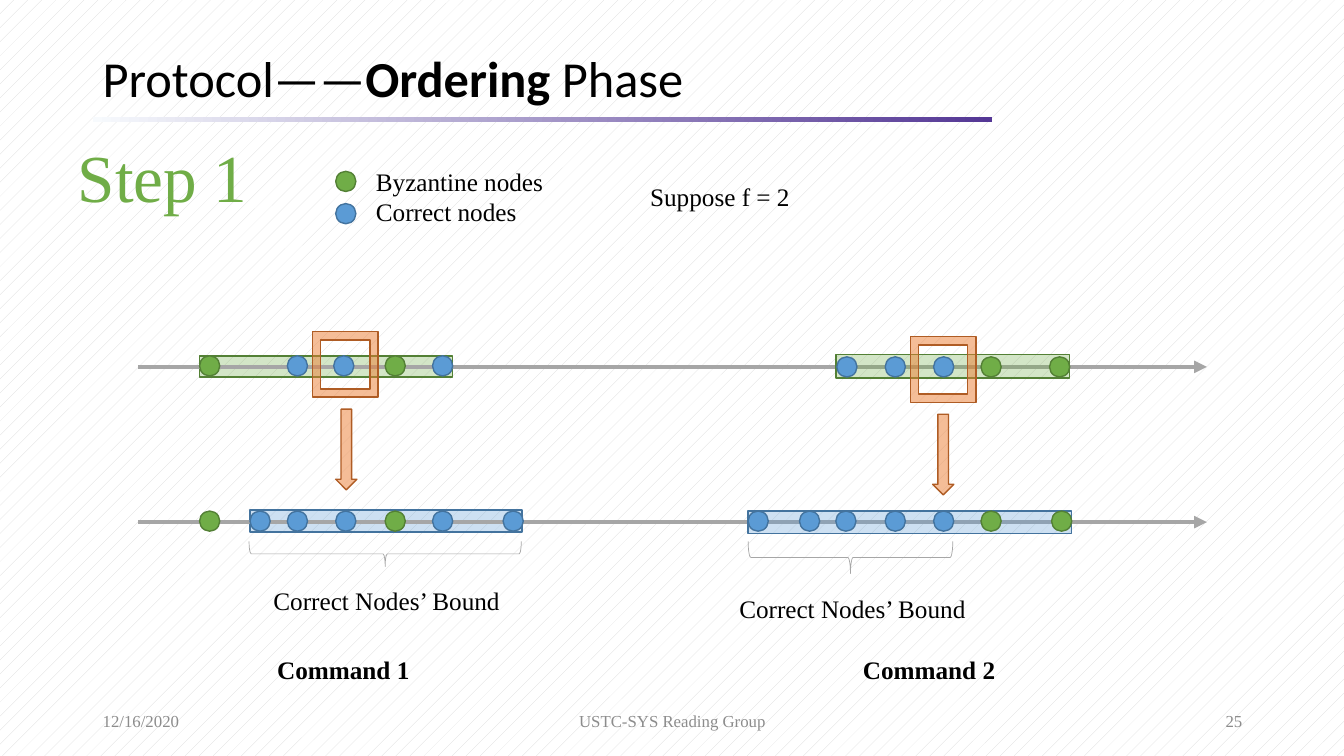
from pptx import Presentation
from pptx.dml.color import RGBColor
from pptx.enum.dml import MSO_PATTERN
from pptx.enum.shapes import MSO_CONNECTOR, MSO_SHAPE as Geo
from pptx.enum.text import MSO_ANCHOR as Anchor, MSO_AUTO_SIZE as AutoSize, PP_ALIGN as Align
from pptx.oxml.ns import qn
from pptx.util import Inches, Pt
from lxml.etree import SubElement

BLACK = RGBColor(0x00, 0x00, 0x00)
WHITE = RGBColor(0xFF, 0xFF, 0xFF)
HATCH = RGBColor(0xD9, 0xD9, 0xD9)
FOOTER_GRAY = RGBColor(0x8C, 0x8C, 0x8C)
AXIS_GRAY = RGBColor(0xA6, 0xA6, 0xA6)
GREEN = RGBColor(0x70, 0xAD, 0x47)
DARK_GREEN = RGBColor(0x53, 0x80, 0x35)
BLUE = RGBColor(0x5B, 0x9B, 0xD5)
DARK_BLUE = RGBColor(0x43, 0x73, 0x9E)
ORANGE = RGBColor(0xED, 0x7D, 0x31)
DARK_ORANGE = RGBColor(0xAF, 0x5C, 0x24)
PALE_BLUE = RGBColor(0xF7, 0xFA, 0xFD)
PURPLE = RGBColor(0x54, 0x37, 0x95)

BYZANTINE = (GREEN, DARK_GREEN)
CORRECT = (BLUE, DARK_BLUE)
MEDIAN = (ORANGE, DARK_ORANGE)
NODE_SIZE = 0.2


class SlideBuilder:
    """Draws on one slide with the shared fonts and colours."""

    font = "Times New Roman"
    title_font = "Calibri"

    def __init__(self, slide):
        self.slide = slide
        self.shapes = slide.shapes

    def background(self):
        fill = self.slide.background.fill
        fill.patterned()
        fill.pattern = MSO_PATTERN.PERCENT_5
        fill.fore_color.rgb = HATCH
        fill.back_color.rgb = WHITE

    def text(self, box, lines, size=18, color=BLACK, align=Align.LEFT, bold=False,
             anchor=Anchor.TOP, wrap=False):
        frame = self.shapes.add_textbox(*map(Inches, box)).text_frame
        frame.word_wrap = wrap
        frame.vertical_anchor = anchor
        frame.auto_size = AutoSize.SHAPE_TO_FIT_TEXT if anchor == Anchor.TOP else AutoSize.NONE
        frame.text = lines
        for paragraph in frame.paragraphs:
            paragraph.alignment = align
            for run in paragraph.runs:
                self.style(run, self.font, size, color, bold)

    def style(self, run, font, size, color, bold):
        run.font.name = font
        run.font.size = Pt(size)
        run.font.color.rgb = color
        run.font.bold = bold

    def title(self, box, parts):
        """Write the title from (text, bold) parts."""
        frame = self.shapes.add_textbox(*map(Inches, box)).text_frame
        frame.word_wrap = True
        frame.vertical_anchor = Anchor.MIDDLE
        paragraph = frame.paragraphs[0]
        paragraph.line_spacing = 0.9
        for words, bold in parts:
            run = paragraph.add_run()
            run.text = words
            self.style(run, self.title_font, 36, BLACK, bold)

    def title_rule(self, box):
        rule = self.shapes.add_shape(Geo.RECTANGLE, *map(Inches, box))
        rule.shadow.inherit = False
        rule.line.fill.background()
        rule.fill.gradient()
        rule.fill.gradient_angle = 0
        for stop, position, color in zip(rule.fill.gradient_stops, (0, 1), (PALE_BLUE, PURPLE)):
            stop.position = position
            stop.color.rgb = color

    def shape(self, geometry, box, colors, opacity=100):
        fill_color, line_color = colors
        shape = self.shapes.add_shape(geometry, *map(Inches, box))
        shape.shadow.inherit = False
        shape.fill.solid()
        shape.fill.fore_color.rgb = fill_color
        shape.line.color.rgb = line_color
        shape.line.width = Pt(1)
        if opacity < 100:
            color = shape.fill._xPr.find(qn("a:solidFill"))[0]
            SubElement(color, qn("a:alpha")).set("val", str(opacity * 1000))

    def node(self, left, top, kind):
        self.shape(Geo.OVAL, (left, top, NODE_SIZE, NODE_SIZE), kind)

    def axis(self, y):
        axis = self.shapes.add_connector(
            MSO_CONNECTOR.STRAIGHT, Inches(1.37), Inches(y), Inches(11.97), Inches(y))
        axis.line.color.rgb = AXIS_GRAY
        axis.line.width = Pt(3)
        SubElement(axis.line._get_or_add_ln(), qn("a:tailEnd")).set("type", "triangle")
        SubElement(axis._element.spPr, qn("a:effectLst"))

    def brace_below(self, left, top, width, depth):
        """Draw a right brace turned to open upwards over the given width."""
        box = (left + (width - depth) / 2, top + (depth - width) / 2, depth, width)
        brace = self.shapes.add_shape(Geo.RIGHT_BRACE, *map(Inches, box))
        brace.rotation = 90
        brace.shadow.inherit = False
        brace.fill.background()
        brace.line.color.rgb = AXIS_GRAY
        brace.line.width = Pt(0.5)

    def median_pick(self, frame_left, frame_top, arrow_left):
        self.shape(Geo.FRAME, (frame_left, frame_top, 0.65, 0.65), MEDIAN, 50)
        self.shape(Geo.DOWN_ARROW, (arrow_left, frame_top + 0.77, 0.21, 0.8), MEDIAN, 50)


def main():
    deck = Presentation()
    deck.slide_width, deck.slide_height = Inches(13.33), Inches(7.5)
    page = SlideBuilder(deck.slides.add_slide(deck.slide_layouts[6]))
    page.background()

    page.title_rule((0.92, 1.16, 8.92, 0.05))
    page.title((0.92, 0.43, 11.5, 0.75),
               [("Protocol——", False), ("Ordering", True), (" Phase", False)])
    for left, width, words, align in (
            (0.92, 3, "12/16/2020", Align.LEFT),
            (4.42, 4.5, "USTC-SYS Reading Group", Align.CENTER),
            (9.42, 3, "25", Align.RIGHT)):
        page.text((left, 6.95, width, 0.4), words, 12, FOOTER_GRAY, align,
                  anchor=Anchor.MIDDLE, wrap=True)

    page.text((0.53, 1.29, 2.17, 0.91), "Step 1", 48, GREEN, Align.CENTER, wrap=True)
    page.text((3.63, 1.6, 3.04, 0.71), "Byzantine nodes\nCorrect nodes", wrap=True)
    page.node(3.33, 1.7, BYZANTINE)
    page.node(3.33, 2.02, CORRECT)
    page.text((6.35, 1.75, 1.6, 0.4), "Suppose f = 2")

    page.shape(Geo.RECTANGLE, (2.48, 5.06, 2.7, 0.22), CORRECT, 30)
    page.shape(Geo.RECTANGLE, (1.98, 3.53, 2.51, 0.21), BYZANTINE, 30)
    for y in (3.64, 5.18):
        page.axis(y)
    page.shape(Geo.RECTANGLE, (7.42, 5.07, 3.21, 0.22), CORRECT, 30)
    page.shape(Geo.RECTANGLE, (8.29, 3.52, 2.32, 0.23), BYZANTINE, 30)

    node_rows = (
        (3.53, BYZANTINE, (1.98, 3.82)),
        (3.53, CORRECT, (2.85, 3.31, 4.29)),
        (3.54, CORRECT, (8.3, 8.78, 9.26)),
        (3.54, BYZANTINE, (9.73, 10.41)),
        (5.07, BYZANTINE, (1.98, 3.82, 9.73, 10.43)),
        (5.07, CORRECT, (2.48, 2.85, 3.33, 4.29, 4.99, 7.42, 7.93, 8.29, 8.78, 9.26)),
    )
    for top, kind, lefts in node_rows:
        for left in lefts:
            page.node(left, top, kind)

    page.median_pick(3.1, 3.29, 3.33)
    page.median_pick(9.03, 3.34, 9.25)
    page.brace_below(2.47, 5.37, 2.7, 0.25)
    page.brace_below(7.42, 5.37, 2.03, 0.32)

    for left, top in ((2.6, 5.76), (7.22, 5.84)):
        page.text((left, top, 2.47, 0.4), "Correct Nodes’ Bound", align=Align.CENTER)
    for left, command in ((2.64, "Command 1"), (8.45, "Command 2")):
        page.text((left, 6.44, 1.53, 0.4), command, align=Align.CENTER, bold=True)

    deck.save("out.pptx")


if __name__ == "__main__":
    main()
